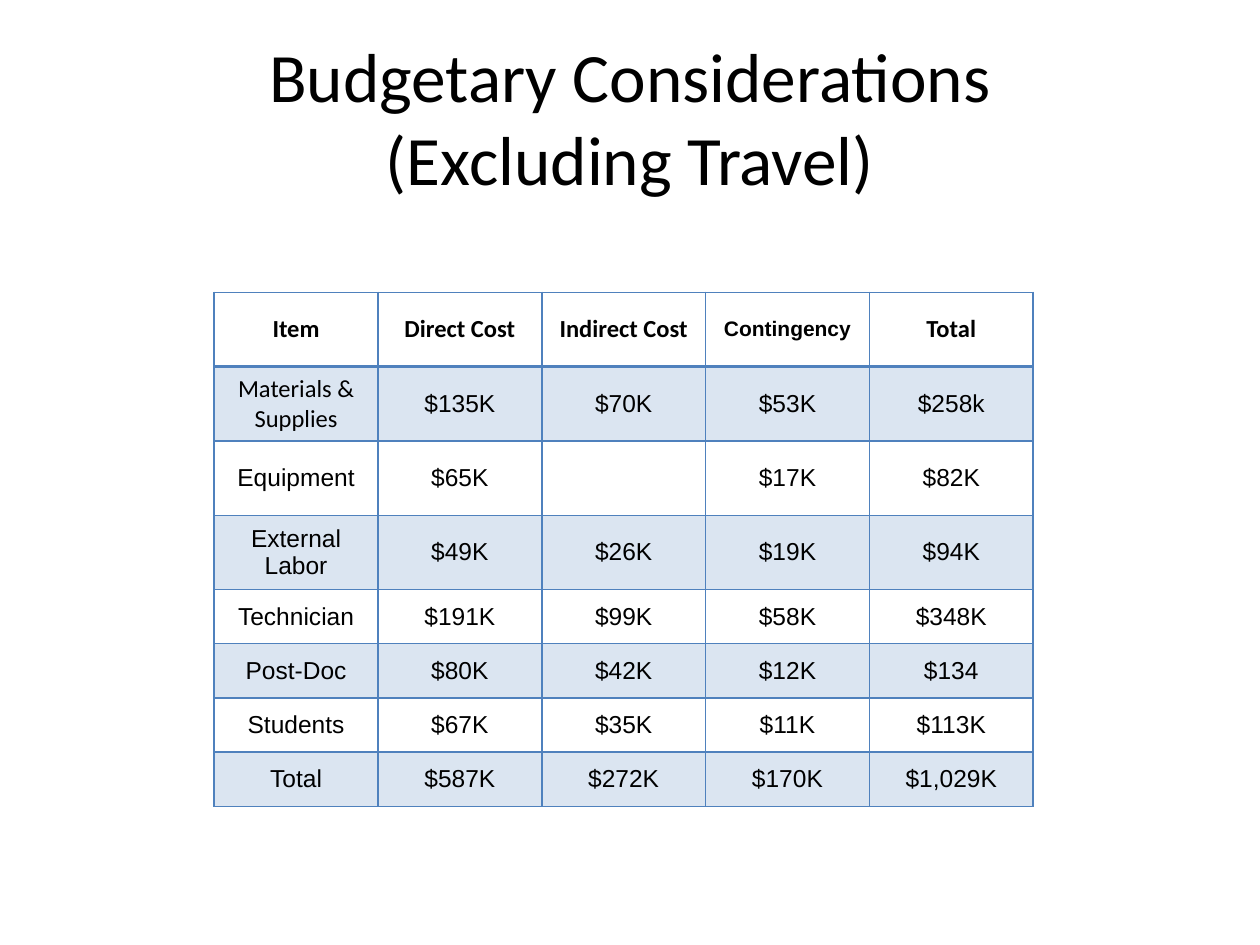
from lxml import etree
from pptx import Presentation
from pptx.dml.color import RGBColor
from pptx.enum.text import MSO_ANCHOR as Anchor, MSO_AUTO_SIZE as AutoSize, PP_ALIGN as Align
from pptx.oxml.ns import qn
from pptx.util import Inches, Pt

# Content
TITLE = ["Budgetary Considerations", "(Excluding Travel)"]
BUDGET = [
    ["Item", "Direct Cost", "Indirect Cost", "Contingency", "Total"],
    ["Materials & Supplies", "$135K", "$70K", "$53K", "$258k"],
    ["Equipment", "$65K", "", "$17K", "$82K"],
    ["External\nLabor", "$49K", "$26K", "$19K", "$94K"],
    ["Technician", "$191K", "$99K", "$58K", "$348K"],
    ["Post-Doc", "$80K", "$42K", "$12K", "$134"],
    ["Students", "$67K", "$35K", "$11K", "$113K"],
    ["Total", "$587K", "$272K", "$170K", "$1,029K"],
]
COLORS = {"text": "000000", "accent": "4F81BD"}
COL_WIDTH = 1.3
ROW_HEIGHTS = [0.59] * 4 + [0.43] * 4
BAND_ALPHA = 20
CALIBRI_CELLS = {"Item", "Direct Cost", "Indirect Cost", "Materials & Supplies"}


def add_text(tf, text, size=14, font="Arial", bold=False):
    """Write centred text: a newline starts a paragraph, \\v breaks a line."""
    tf.text = text
    for p in tf.paragraphs:
        p.alignment = Align.CENTER
        for r in p.runs:
            r.font.size, r.font.name, r.font.bold = Pt(size), font, bold
            r.font.color.rgb = RGBColor.from_string(COLORS["text"])


def set_borders(cell, **widths):
    """Draw the four cell borders, 1 pt unless a side is given."""
    tc_pr = cell._tc.get_or_add_tcPr()
    for side in "LRTB":
        ln = etree.SubElement(tc_pr, qn(f"a:ln{side}"), w=str(Pt(widths.get(side, 1))))
        fill = etree.SubElement(ln, qn("a:solidFill"))
        etree.SubElement(fill, qn("a:srgbClr"), val=COLORS["accent"])


def set_band(cell, banded):
    """Tint a banded cell; leave the others clear."""
    if not banded:
        cell.fill.background()
        return
    cell.fill.solid()
    cell.fill.fore_color.rgb = RGBColor.from_string(COLORS["accent"])
    color = cell._tc.tcPr.find(f"{qn('a:solidFill')}/{qn('a:srgbClr')}")
    etree.SubElement(color, qn("a:alpha"), val=str(BAND_ALPHA * 1000))


def main():
    prs = Presentation()
    prs.slide_width, prs.slide_height = Inches(10), Inches(7.5)
    slide = prs.slides.add_slide(prs.slide_layouts[5])

    # Title
    title = slide.shapes.title
    title.left, title.top = Inches(0.5), Inches(0.3)
    title.width, title.height = Inches(9), Inches(1.25)
    tf = title.text_frame
    tf.auto_size, tf.vertical_anchor = AutoSize.NONE, Anchor.MIDDLE
    add_text(tf, "\v".join(TITLE), size=39.6, font="Calibri")

    # Budget table
    n_rows, n_cols = len(BUDGET), len(BUDGET[0])
    table = slide.shapes.add_table(
        n_rows, n_cols, Inches(1.7), Inches(2.32),
        Inches(COL_WIDTH * n_cols), Inches(sum(ROW_HEIGHTS))).table
    table.first_row = table.horz_banding = False
    for col in table.columns:
        col.width = Inches(COL_WIDTH)
    for i, (values, height) in enumerate(zip(BUDGET, ROW_HEIGHTS)):
        table.rows[i].height = Inches(height)
        for j, value in enumerate(values):
            cell = table.cell(i, j)
            header = i == 0
            calibri = value in CALIBRI_CELLS or (header and value == "Total")
            cell.vertical_anchor = Anchor.MIDDLE
            add_text(cell.text_frame, value, bold=header,
                     size=12 if header and not calibri else 14,
                     font="Calibri" if calibri else "Arial")
            set_borders(cell, **({"B": 2} if header else {"T": 2} if i == 1 else {}))
            set_band(cell, banded=i % 2 == 1)

    prs.save("out.pptx")


if __name__ == "__main__":
    main()
